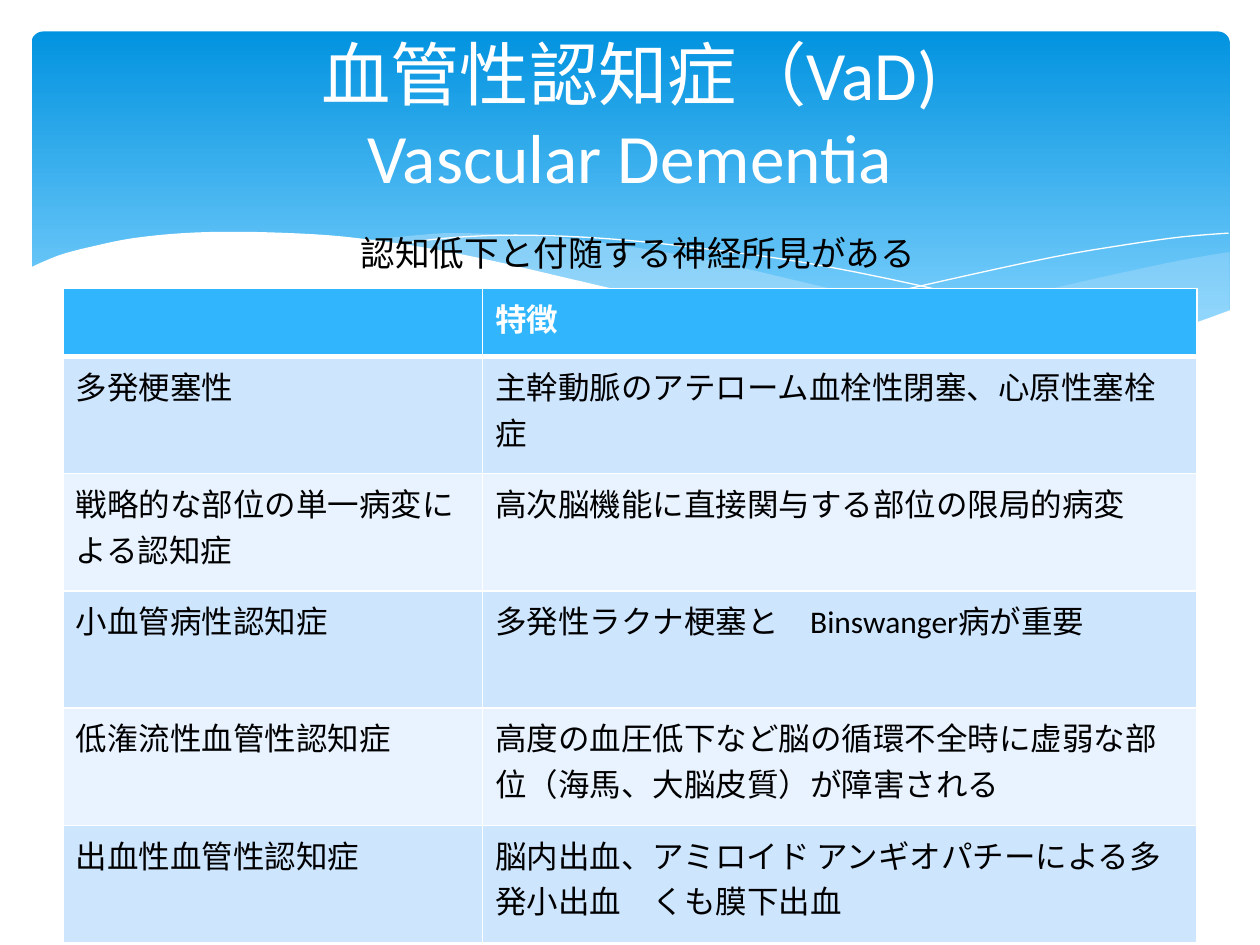
import pptx
import pptx.dml.color
import pptx.enum.shapes
import pptx.enum.text
import pptx.oxml.ns
import pptx.util
from lxml import etree
from pptx.util import Inches

COLORS = {
    "white": "FFFFFF", "black": "000000", "sky_top": "0293E0", "sky_bottom": "83D3FE",
    "mist": "C6E7FC", "header": "31B6FD", "odd_row": "CEE5FE", "even_row": "E8F3FF",
}
FONT = "Calibri"
TITLE_LINES = [
    [("血管性認知症（VaD)", 39.6, "white")],
    [("Vascular Dementia", 39.6, "white")],
    [(" ", 39.6, "white"), ("認知低下と付随する神経所見がある", 19.8, "black")],
]
TABLE_ROWS = [
    ("", "特徴"),
    ("多発梗塞性", "主幹動脈のアテローム血栓性閉塞、心原性塞栓症"),
    ("戦略的な部位の単一病変による認知症", "高次脳機能に直接関与する部位の限局的病変"),
    ("小血管病性認知症", "多発性ラクナ梗塞と　Binswanger病が重要"),
    ("低潅流性血管性認知症",
     "高度の血圧低下など脳の循環不全時に虚弱な部位（海馬、大脳皮質）が障害される"),
    ("出血性血管性認知症",
     "脳内出血、アミロイド アンギオパチーによる多発小出血　くも膜下出血"),
]
COLUMN_WIDTHS = [3.33, 5.67]
HEADER_HEIGHT, ROW_HEIGHT = 0.54, 0.93

# Each wave is a list of curves; a curve runs smoothly through its knots (inches),
# and straight lines join one curve to the next.
FILLED_WAVES = [
    ("mist", 29, [
        [(9.76, 2), (9.35, 2.07), (8.61, 2.23), (7.79, 2.42), (7.06, 2.57), (6.61, 2.65)],
        [(6.61, 2.65), (7.05, 2.71), (7.57, 2.76), (8.14, 2.78), (8.63, 2.75),
         (9.13, 2.67), (9.49, 2.57), (9.76, 2.47)],
    ]),
    ("mist", 40, [
        [(8.93, 2.73), (8.37, 2.65), (7.75, 2.54), (7.06, 2.4), (6.29, 2.22), (5.69, 2.08),
         (5.14, 1.98), (4.65, 1.91), (4.2, 1.87), (3.61, 1.85), (3.28, 1.87), (2.86, 1.91)],
        [(2.86, 1.91), (3.42, 1.99), (4.04, 2.11), (4.49, 2.22), (5.3, 2.4), (6.01, 2.55),
         (6.65, 2.66), (7.22, 2.74), (7.73, 2.77), (8.18, 2.78), (8.57, 2.77), (8.93, 2.73)],
    ]),
    ("white", 100, [
        [(9.77, 2.46), (9.4, 2.59), (8.99, 2.69), (8.5, 2.75), (8.09, 2.77), (7.61, 2.75),
         (7.08, 2.7), (6.48, 2.62), (5.79, 2.5), (5.03, 2.33), (4.47, 2.2), (3.91, 2.07),
         (3.4, 1.97), (2.92, 1.9), (2.5, 1.86), (1.93, 1.84), (1.46, 1.85), (1.06, 1.89),
         (0.76, 1.95), (0.52, 2.01), (0.36, 2.07), (0.23, 2.13)],
        [(0.23, 3.29), (9.77, 3.29)],
    ]),
]
WAVE_LINES = [
    [(3.09, 1.95), (3.44, 1.9), (3.87, 1.87), (4.33, 1.87), (4.89, 1.9), (5.56, 1.97),
     (6.36, 2.08), (7.27, 2.26), (8.31, 2.51), (9.07, 2.72)],
    [(6.13, 2.57), (6.72, 2.41), (7.48, 2.23), (8.36, 2.04), (8.95, 1.94), (9.38, 1.88),
     (9.75, 1.85)],
]


def color(name):
    return pptx.dml.color.RGBColor.from_string(COLORS[name])


def smooth(knots, steps=4):
    """Catmull-Rom points through the knots."""
    padded = [knots[0], *knots, knots[-1]]
    points = [knots[0]]
    for a, b, c, d in zip(padded, padded[1:], padded[2:], padded[3:]):
        for step in range(1, steps + 1):
            t = step / steps
            points.append(tuple(
                (2 * q + (r - p) * t + (2 * p - 5 * q + 4 * r - s) * t ** 2
                 + (3 * q - p - 3 * r + s) * t ** 3) / 2
                for p, q, r, s in zip(a, b, c, d)))
    return points


def add_wave(page, curves, close):
    points = [(Inches(x), Inches(y)) for knots in curves for x, y in smooth(knots)]
    builder = page.shapes.build_freeform(*points[0])
    builder.add_line_segments(points[1:], close=close)
    wave = builder.convert_to_shape()
    wave.shadow.inherit = False
    return wave


def add_backdrop(page):
    sky = page.shapes.add_shape(pptx.enum.shapes.MSO_SHAPE.ROUNDED_RECTANGLE,
                                Inches(0.25), Inches(0.25), Inches(9.51), Inches(2.7))
    sky.adjustments[0] = 0.034
    sky.shadow.inherit = False
    sky.line.fill.background()
    sky.fill.gradient()
    sky.fill.gradient_angle = 270
    for stop, name, position in zip(sky.fill.gradient_stops, ("sky_top", "sky_bottom"), (0, 0.9)):
        stop.color.rgb = color(name)
        stop.position = position

    def add_filled(name, opacity, curves):
        wave = add_wave(page, curves, True)
        wave.line.fill.background()
        wave.fill.solid()
        wave.fill.fore_color.rgb = color(name)
        if opacity < 100:
            tint = wave._element.spPr.find(".//" + pptx.oxml.ns.qn("a:srgbClr"))
            etree.SubElement(tint, pptx.oxml.ns.qn("a:alpha"), val=str(opacity * 1000))

    for tinted in FILLED_WAVES[:-1]:
        add_filled(*tinted)
    for knots in WAVE_LINES:
        wave = add_wave(page, [knots], False)
        wave.fill.background()
        wave.line.color.rgb = color("white")
        wave.line.width = pptx.util.Pt(0)
    add_filled(*FILLED_WAVES[-1])


def format_font(font, size, name, bold=False):
    for key, value in {"size": pptx.util.Pt(size), "name": FONT, "bold": bold}.items():
        setattr(font, key, value)
    font.color.rgb = color(name)


def set_borders(cell, widths):
    properties = cell._tc.get_or_add_tcPr()
    for side, width in widths.items():
        border = etree.SubElement(properties, pptx.oxml.ns.qn("a:ln" + side),
                                  w=str(pptx.util.Pt(width)))
        fill = etree.SubElement(border, pptx.oxml.ns.qn("a:solidFill"))
        etree.SubElement(fill, pptx.oxml.ns.qn("a:srgbClr"), val=COLORS["white"])


def add_dementia_table(page):
    heights = [HEADER_HEIGHT] + [ROW_HEIGHT] * (len(TABLE_ROWS) - 1)
    table = page.shapes.add_table(len(heights), len(COLUMN_WIDTHS), Inches(0.5), Inches(2.29),
                                  Inches(sum(COLUMN_WIDTHS)), Inches(sum(heights))).table
    for column, width in zip(table.columns, COLUMN_WIDTHS):
        column.width = Inches(width)
    for index, (texts, height) in enumerate(zip(TABLE_ROWS, heights)):
        table.rows[index].height = Inches(height)
        header = index == 0
        fill = "header" if header else ("even_row", "odd_row")[index % 2]
        borders = {"L": 1, "R": 1, "T": 3 if index == 1 else 1, "B": 3 if header else 1}
        for cell, text in zip(table.rows[index].cells, texts):
            set_borders(cell, borders)
            cell.fill.solid()
            cell.fill.fore_color.rgb = color(fill)
            cell.text = text
            format_font(cell.text_frame.paragraphs[0].font, 18, "black")
            for span in cell.text_frame.paragraphs[0].runs:
                format_font(span.font, 18, "white" if header else "black", header)


def add_title(page):
    box = page.shapes.add_textbox(Inches(0.5), Inches(0.55), Inches(9), Inches(1.37))
    frame = box.text_frame
    frame.word_wrap = True
    frame.vertical_anchor = pptx.enum.text.MSO_ANCHOR.MIDDLE
    para = frame.paragraphs[0]
    para.alignment = pptx.enum.text.PP_ALIGN.CENTER
    for index, line in enumerate(TITLE_LINES):
        if index:
            para.add_line_break()
        for text, size, name in line:
            span = para.add_run()
            span.text = text
            format_font(span.font, size, name)


def main():
    deck = pptx.Presentation()
    deck.slide_width, deck.slide_height = Inches(10), Inches(7.5)
    page = deck.slides.add_slide(deck.slide_layouts[6])
    add_backdrop(page)
    add_dementia_table(page)
    add_title(page)
    deck.save("out.pptx")


if __name__ == "__main__":
    main()
